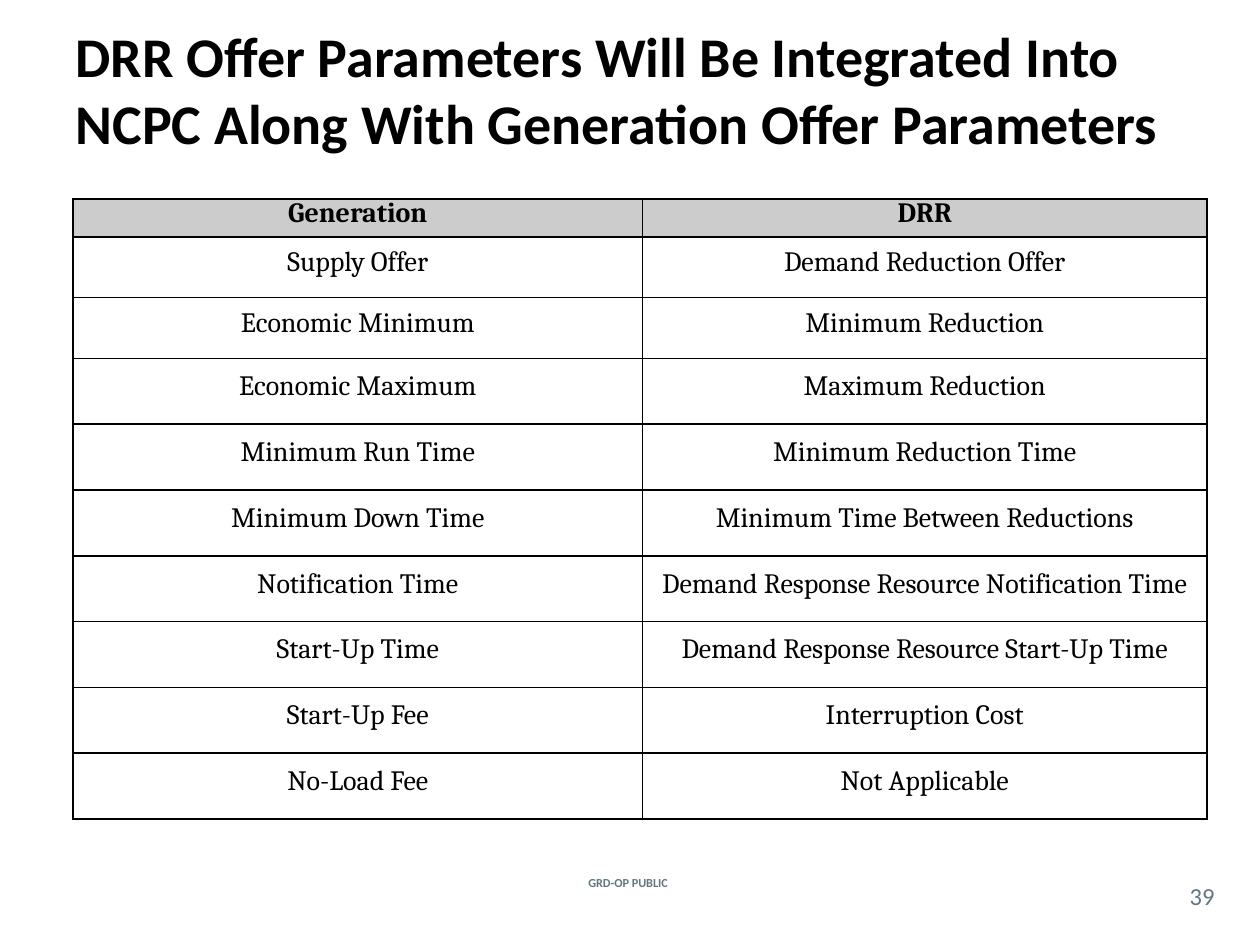
from lxml.etree import SubElement
from pptx import Presentation
from pptx.dml.color import RGBColor
from pptx.enum.text import MSO_ANCHOR, MSO_AUTO_SIZE, PP_ALIGN
from pptx.oxml.ns import qn
from pptx.util import Inches, Pt

COLORS = {"text": "000000", "line": "000000", "header": "CCCCCC", "footer": "62777F"}
W, H = Inches(10), Inches(7.5)

ROWS = [
    ("Generation", "DRR"),
    ("Supply Offer", "Demand Reduction Offer"),
    ("Economic Minimum", "Minimum Reduction"),
    ("Economic Maximum", "Maximum Reduction"),
    ("Minimum Run Time", "Minimum Reduction Time"),
    ("Minimum Down Time", "Minimum Time Between Reductions"),
    ("Notification Time", "Demand Response Resource Notification Time"),
    ("Start-Up Time", "Demand Response Resource Start-Up Time"),
    ("Start-Up Fee", "Interruption Cost"),
    ("No-Load Fee", "Not Applicable"),
]
COL_WIDTHS = [4.52, 4.48]
ROW_HEIGHTS = [0.3] + [0.48] * 2 + [0.52] * 7


def box(left, top, width, height):
    return tuple(Inches(v) for v in (left, top, width, height))


def add_run(p, text, font, size, color, bold=False):
    r = p.add_run()
    r.text = text
    r.font.name, r.font.size, r.font.bold = font, Pt(size), bold
    r.font.color.rgb = RGBColor.from_string(COLORS[color])


def add_title(slide, area, text):
    sp = slide.shapes.title
    sp.left, sp.top, sp.width, sp.height = area
    tf = sp.text_frame
    tf.word_wrap, tf.auto_size = True, MSO_AUTO_SIZE.NONE
    tf.vertical_anchor = MSO_ANCHOR.MIDDLE
    p = tf.paragraphs[0]
    p.alignment = PP_ALIGN.LEFT
    add_run(p, text, "Calibri", 32, "text", bold=True)


def add_label(slide, area, text, size, bold=False):
    tf = slide.shapes.add_textbox(*area).text_frame
    tf.margin_left = tf.margin_right = tf.margin_top = tf.margin_bottom = 0
    tf.word_wrap = True
    tf.vertical_anchor = MSO_ANCHOR.MIDDLE
    p = tf.paragraphs[0]
    p.alignment = PP_ALIGN.CENTER
    add_run(p, text, "Calibri", size, "footer", bold)


def set_borders(cell):
    tc_pr = cell._tc.get_or_add_tcPr()
    for i, side in enumerate(("a:lnL", "a:lnR", "a:lnT", "a:lnB")):
        ln = tc_pr.makeelement(qn(side), {"w": str(Pt(1))})
        fill = SubElement(ln, qn("a:solidFill"))
        SubElement(fill, qn("a:srgbClr"), val=COLORS["line"])
        tc_pr.insert(i, ln)  # borders come before the cell fill


def fill_cell(cell, text, header):
    cell.margin_left = cell.margin_right = Inches(0.07)
    cell.margin_top = cell.margin_bottom = 0
    cell.vertical_anchor = MSO_ANCHOR.MIDDLE
    if header:
        cell.fill.solid()
        cell.fill.fore_color.rgb = RGBColor.from_string(COLORS["header"])
    else:
        cell.fill.background()
    set_borders(cell)
    p = cell.text_frame.paragraphs[0]
    p.alignment, p.line_spacing = PP_ALIGN.CENTER, Pt(13)
    if header:
        p.space_after = Pt(3)
    add_run(p, text, "Cambria", 16, "text", bold=header)


def add_parameter_table(slide, area):
    table = slide.shapes.add_table(len(ROWS), len(COL_WIDTHS), *area).table
    table.horz_banding = False
    for col, share in zip(table.columns, COL_WIDTHS):
        col.width = int(area[2] * share / sum(COL_WIDTHS))
    for row, share in zip(table.rows, ROW_HEIGHTS):
        row.height = int(area[3] * share / sum(ROW_HEIGHTS))
    for i, texts in enumerate(ROWS):
        for j, text in enumerate(texts):
            fill_cell(table.cell(i, j), text, header=i == 0)


def main():
    prs = Presentation()
    prs.slide_width, prs.slide_height = W, H
    slide = prs.slides.add_slide(prs.slide_layouts[5])

    # Title
    add_title(slide, box(0.5, 0.08, 9, 1.25),
              "DRR Offer Parameters Will Be Integrated Into "
              "NCPC Along With Generation Offer Parameters")
    # Generation and DRR parameters side by side
    add_parameter_table(slide, box(0.58, 1.58, 9, 4.92))
    # Footer and page number
    add_label(slide, box(4.25, 6.92, 1.47, 0.17), "GRD-OP PUBLIC", 7, bold=True)
    add_label(slide, box(9.33, 6.96, 0.42, 0.29), "39", 14)

    prs.save("out.pptx")


if __name__ == "__main__":
    main()
